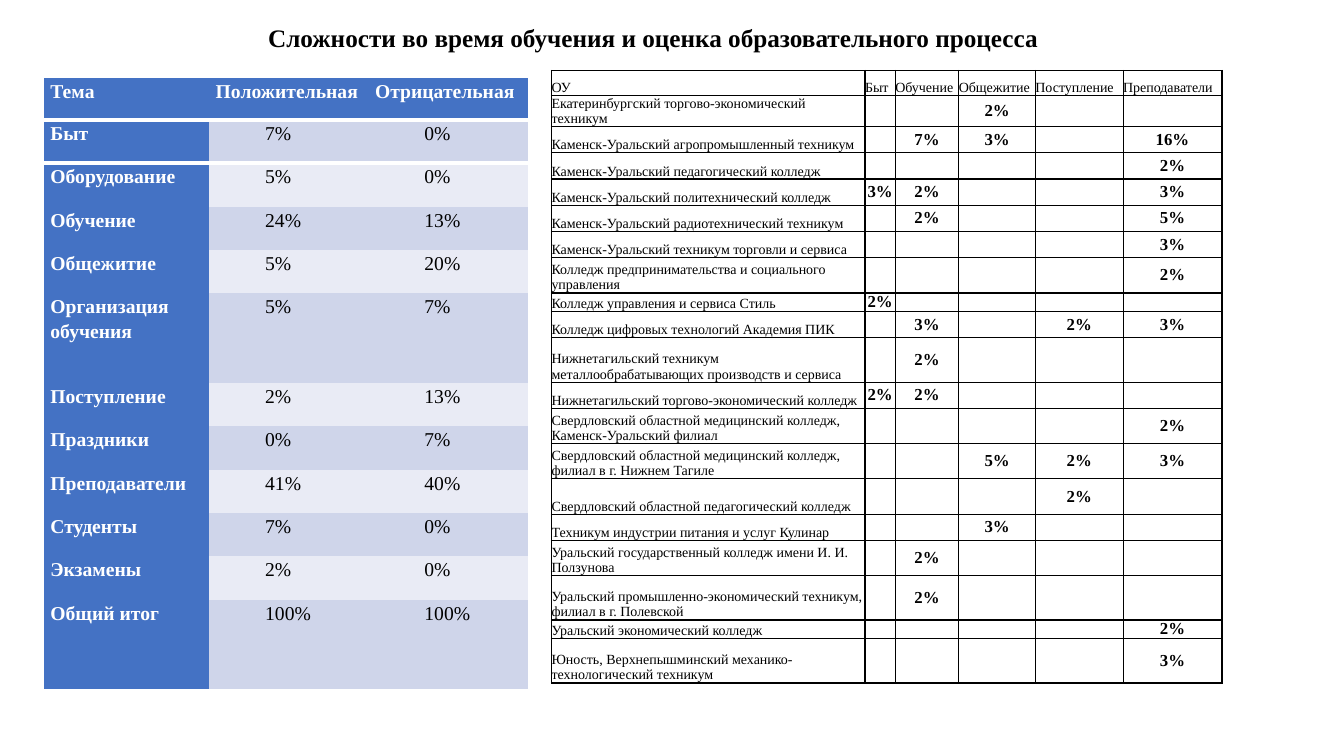
from lxml import etree
from pptx import Presentation
from pptx.dml.color import RGBColor
from pptx.enum.text import MSO_ANCHOR, MSO_AUTO_SIZE, PP_ALIGN
from pptx.oxml.ns import qn
from pptx.util import Inches, Pt

MIDDLE, BOTTOM, TOP = MSO_ANCHOR.MIDDLE, MSO_ANCHOR.BOTTOM, MSO_ANCHOR.TOP
LEFT, CENTER, JUSTIFY = PP_ALIGN.LEFT, PP_ALIGN.CENTER, PP_ALIGN.JUSTIFY
NO_AUTOFIT = MSO_AUTO_SIZE.NONE

FONT = "Times New Roman"
BLACK = RGBColor(0x00, 0x00, 0x00)
WHITE = RGBColor(0xFF, 0xFF, 0xFF)
BLUE = RGBColor(0x44, 0x72, 0xC4)
BAND_DARK = RGBColor(0xCF, 0xD5, 0xEA)
BAND_LIGHT = RGBColor(0xE9, 0xEB, 0xF5)
PLAIN_STYLE = "{2D5ABB26-0587-4C30-8999-92F81FD0307C}"

TITLE = "Сложности во время обучения и оценка образовательного процесса"

TOPIC_COLUMNS = [1.64, 1.58, 1.59]
TOPICS = [
    ("Темa", "Положительная", "Отрицательная"),
    ("Быт", "7%", "0%"),
    ("Оборудование", "5%", "0%"),
    ("Обучение", "24%", "13%"),
    ("Общежитие", "5%", "20%"),
    ("Организация обучения", "5%", "7%"),
    ("Поступление", "2%", "13%"),
    ("Праздники", "0%", "7%"),
    ("Преподаватели", "41%", "40%"),
    ("Студенты", "7%", "0%"),
    ("Экзамены", "2%", "0%"),
    ("Общий итог", "100%", "100%"),
]
TALL_TOPICS = ("Организация обучения", "Общий итог")

COLLEGE_COLUMNS = [3.11, 0.3, 0.63, 0.76, 0.87, 0.98]
COLLEGE_HEADER = ("ОУ", "Быт", "Обучение", "Общежитие", "Поступление", "Преподаватели")
COLLEGES = [
    (0.26, "Екатеринбургский торгово-экономический техникум", {3: 2}),
    (0.26, "Каменск-Уральский агропромышленный техникум", {2: 7, 3: 3, 5: 16}),
    (0.26, "Каменск-Уральский педагогический колледж", {5: 2}),
    (0.26, "Каменск-Уральский политехнический колледж", {1: 3, 2: 2, 5: 3}),
    (0.26, "Каменск-Уральский радиотехнический техникум", {2: 2, 5: 5}),
    (0.26, "Каменск-Уральский техникум торговли и сервиса", {5: 3}),
    (0.35, "Колледж предпринимательства и социального управления", {5: 2}),
    (0.17, "Колледж управления и сервиса Стиль", {1: 2}),
    (0.26, "Колледж цифровых технологий Академия ПИК", {2: 3, 4: 2, 5: 3}),
    (0.44, "Нижнетагильский техникум металлообрабатывающих производств и сервиса", {2: 2}),
    (0.26, "Нижнетагильский торгово-экономический колледж", {1: 2, 2: 2}),
    (0.35, "Свердловский областной медицинский колледж, Каменск-Уральский филиал", {5: 2}),
    (0.35, "Свердловский областной медицинский колледж, филиал в г. Нижнем Тагиле",
     {3: 5, 4: 2, 5: 3}),
    (0.35, "Свердловский областной педагогический колледж", {4: 2}),
    (0.26, "Техникум индустрии питания и услуг Кулинар", {3: 3}),
    (0.35, "Уральский государственный колледж имени И. И. Ползунова", {2: 2}),
    (0.44, "Уральский промышленно-экономический техникум, филиал в г. Полевской", {2: 2}),
    (0.17, "Уральский экономический колледж", {5: 2}),
    (0.44, "Юность, Верхнепышминский механико-технологический техникум", {5: 3}),
]


def format_runs(paragraph, size, color, bold):
    for run in paragraph.runs:
        run.font.name = FONT
        run.font.size = Pt(size)
        run.font.bold = bold
        run.font.color.rgb = color


def set_borders(cell, color, widths):
    properties = cell._tc.get_or_add_tcPr()
    for side in "LRTB":
        if side in widths:
            line = etree.SubElement(properties, qn(f"a:ln{side}"), w=str(Pt(widths[side])))
            fill = etree.SubElement(line, qn("a:solidFill"))
            etree.SubElement(fill, qn("a:srgbClr"), val=str(color))


def fill_cell(cell, text, size, color, bold, align, anchor, inset):
    cell.margin_left = cell.margin_right = Inches(inset)
    cell.margin_top = cell.margin_bottom = 0
    cell.vertical_anchor = anchor
    paragraph = cell.text_frame.paragraphs[0]
    paragraph.alignment = align
    if text:
        paragraph.text = text
        format_runs(paragraph, size, color, bold)
    else:
        etree.SubElement(paragraph._p, qn("a:endParaRPr"), sz=str(size * 100))
    return paragraph


def add_plain_table(slide, left, top, columns, rows):
    frame = slide.shapes.add_table(len(rows), len(columns), Inches(left), Inches(top),
                                   Inches(sum(columns)), Inches(sum(rows)))
    table = frame.table
    table._tbl.tblPr.find(qn("a:tableStyleId")).text = PLAIN_STYLE
    for column, width in zip(table.columns, columns):
        column.width = Inches(width)
    for row, height in zip(table.rows, rows):
        row.height = Inches(height)
    return table


def add_title(slide, left, top, width, height):
    title = slide.shapes.title
    title.left, title.top = Inches(left), Inches(top)
    title.width, title.height = Inches(width), Inches(height)
    frame = title.text_frame
    frame.text = TITLE
    frame.word_wrap = True
    frame.auto_size = NO_AUTOFIT
    frame.vertical_anchor = MIDDLE
    paragraph = frame.paragraphs[0]
    paragraph.alignment = LEFT
    paragraph.line_spacing = 0.9
    paragraph.space_after = Pt(6)
    format_runs(paragraph, 18, BLACK, True)


def add_topic_table(slide, left, top):
    heights = [0.42] + [0.89 if topic[0] in TALL_TOPICS else 0.43 for topic in TOPICS[1:]]
    table = add_plain_table(slide, left, top, TOPIC_COLUMNS, heights)
    for r, topic in enumerate(TOPICS):
        band = BAND_DARK if r % 2 else BAND_LIGHT
        for c, text in enumerate(topic):
            cell = table.cell(r, c)
            heading = r == 0 or c == 0
            paragraph = fill_cell(cell, text, 14, WHITE if heading else BLACK, heading,
                                  JUSTIFY if r else LEFT, TOP, 0.07)
            paragraph.line_spacing = 1.15
            if not heading:
                paragraph._p.get_or_add_pPr().set("indent", str(Inches(0.49)))
            widths = {}
            if c == 0:
                widths["L"] = 1
            if c == len(topic) - 1:
                widths["R"] = 1
            if r == 0:
                widths.update(T=1, B=3)
            if r == 1:
                widths["T"] = 3
            if r == len(TOPICS) - 1:
                widths["B"] = 1
            set_borders(cell, WHITE, widths)
            cell.fill.solid()
            cell.fill.fore_color.rgb = BLUE if heading else band


def add_college_table(slide, left, top):
    heights = [0.25] + [height for height, _, _ in COLLEGES]
    table = add_plain_table(slide, left, top, COLLEGE_COLUMNS, heights)
    rows = [COLLEGE_HEADER]
    for _, college, shares in COLLEGES:
        percents = [f"{shares[c]}%" if c in shares else ""
                    for c in range(1, len(COLLEGE_COLUMNS))]
        rows.append((college, *percents))
    for r, row in enumerate(rows):
        for c, text in enumerate(row):
            cell = table.cell(r, c)
            if r == 0 or c == 0:
                fill_cell(cell, text, 10, BLACK, False, LEFT, BOTTOM, 0)
            else:
                fill_cell(cell, text, 12 if text else 10, BLACK, True, CENTER, MIDDLE, 0)
            set_borders(cell, BLACK, dict.fromkeys("LRTB", 1))
            cell.fill.background()


def main():
    presentation = Presentation()
    presentation.slide_width = Inches(13.33)
    presentation.slide_height = Inches(7.5)
    slide = presentation.slides.add_slide(presentation.slide_layouts[5])
    add_title(slide, 2.56, 0.02, 8.38, 0.75)
    add_topic_table(slide, 0.43, 0.77)
    add_college_table(slide, 5.47, 0.7)
    presentation.save("out.pptx")


if __name__ == "__main__":
    main()
